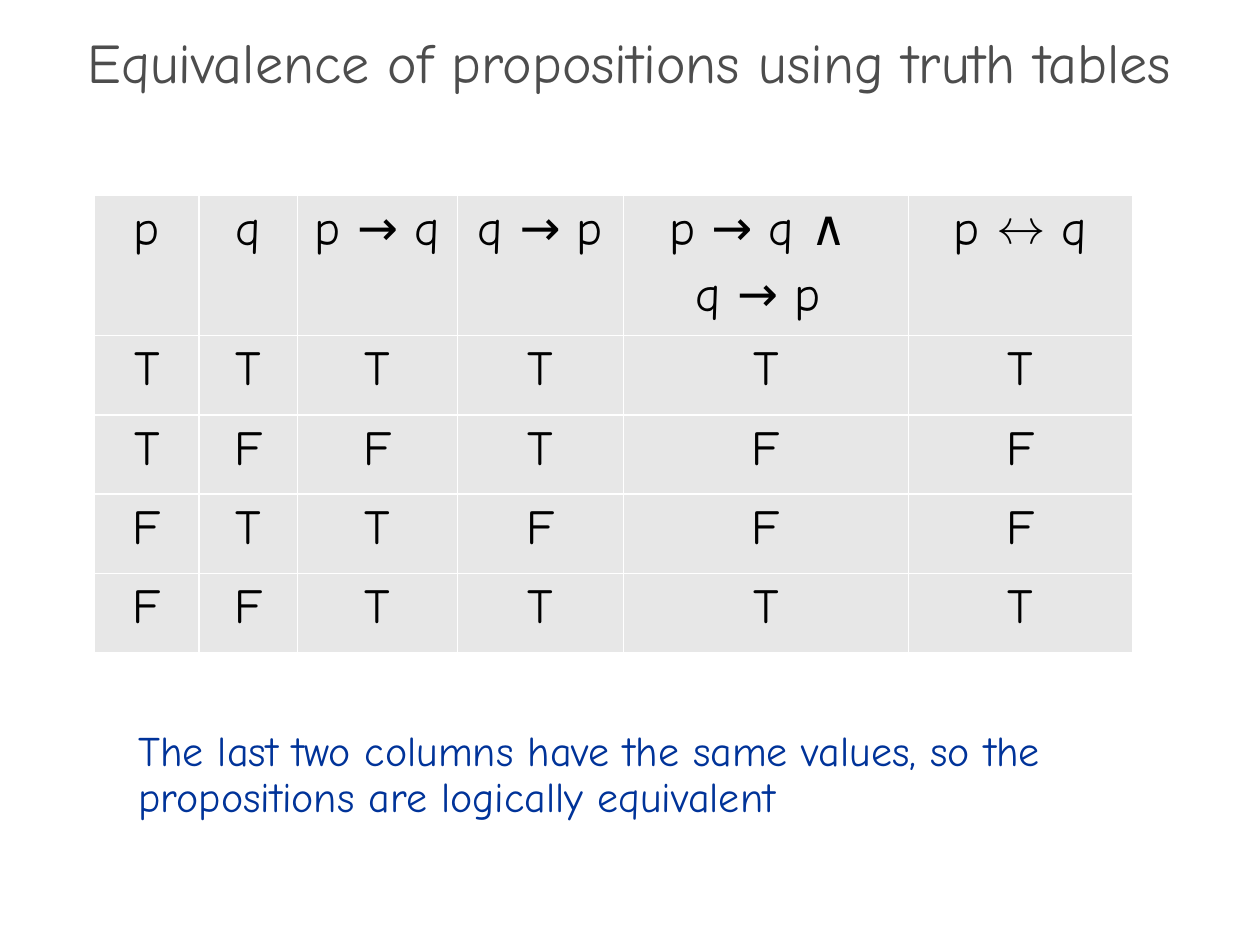
from lxml.etree import SubElement
from pptx import Presentation
from pptx.dml.color import RGBColor
from pptx.enum.text import MSO_ANCHOR, PP_ALIGN
from pptx.oxml.ns import qn
from pptx.util import Inches, Pt

COLORS = {
    "title": "4D4D4D",
    "cell": "E7E7E7",
    "border": "FFFFFF",
    "table_text": "000000",
    "note": "003399",
}
FONT = "Comic Neue"


def write_text(frame, text, size, color, align=PP_ALIGN.LEFT, line_spacing=None, space_before=None):
    """Fill a text frame, one paragraph per line of text."""
    frame.word_wrap = True
    frame.text = text
    for para in frame.paragraphs:
        para.alignment = align
        para.line_spacing = line_spacing
        para.space_before = space_before
        for span in para.runs:
            span.font.name = FONT
            span.font.size = Pt(size)
            span.font.bold = False
            span.font.color.rgb = RGBColor.from_string(COLORS[color])


def add_borders(cell):
    """Draw a one-point line on each side of a cell."""
    properties = cell._tc.get_or_add_tcPr()
    for side in ("lnL", "lnR", "lnT", "lnB"):
        line = SubElement(properties, qn(f"a:{side}"), w=str(Pt(1)))
        fill = SubElement(line, qn("a:solidFill"))
        SubElement(fill, qn("a:srgbClr"), val=COLORS["border"])


deck = Presentation()
deck.slide_width = Inches(10)
deck.slide_height = Inches(7.5)
page = deck.slides.add_slide(deck.slide_layouts[6])

# Title
title = page.shapes.add_textbox(Inches(0), Inches(0.27), Inches(10), Inches(0.5))
title.text_frame.vertical_anchor = MSO_ANCHOR.MIDDLE
write_text(title.text_frame, "Equivalence of propositions using truth tables",
           size=32, color="title", align=PP_ALIGN.CENTER, line_spacing=0.9)

# Truth table
rows = [
    ["p", "q", "p → q ", "q → p ", "p → q ∧ \nq → p ", "p ↔ q"],
    "TTTTTT",
    "TFFTFF",
    "FTTFFF",
    "FFTTTT",
]
column_widths = [0.83, 0.78, 1.27, 1.32, 2.26, 1.78]
row_heights = [0.67] + [0.63] * 4
table = page.shapes.add_table(
    len(rows), len(column_widths), Inches(0.75), Inches(1.55),
    Inches(sum(column_widths)), Inches(sum(row_heights))).table
table.first_row = False
table.horz_banding = False
for column, width in zip(table.columns, column_widths):
    column.width = Inches(width)
for row, height, values in zip(table.rows, row_heights, rows):
    row.height = Inches(height)
    for cell, value in zip(row.cells, values):
        add_borders(cell)
        cell.fill.solid()
        cell.fill.fore_color.rgb = RGBColor.from_string(COLORS["cell"])
        write_text(cell.text_frame, value, size=28, color="table_text",
                   align=PP_ALIGN.CENTER, space_before=Pt(5.6))

# Conclusion
note = page.shapes.add_textbox(Inches(1), Inches(5.75), Inches(8.17), Inches(0.83))
write_text(note.text_frame,
           "The last two columns have the same values, so the propositions are logically equivalent",
           size=24, color="note", line_spacing=0.9)

deck.save("out.pptx")
